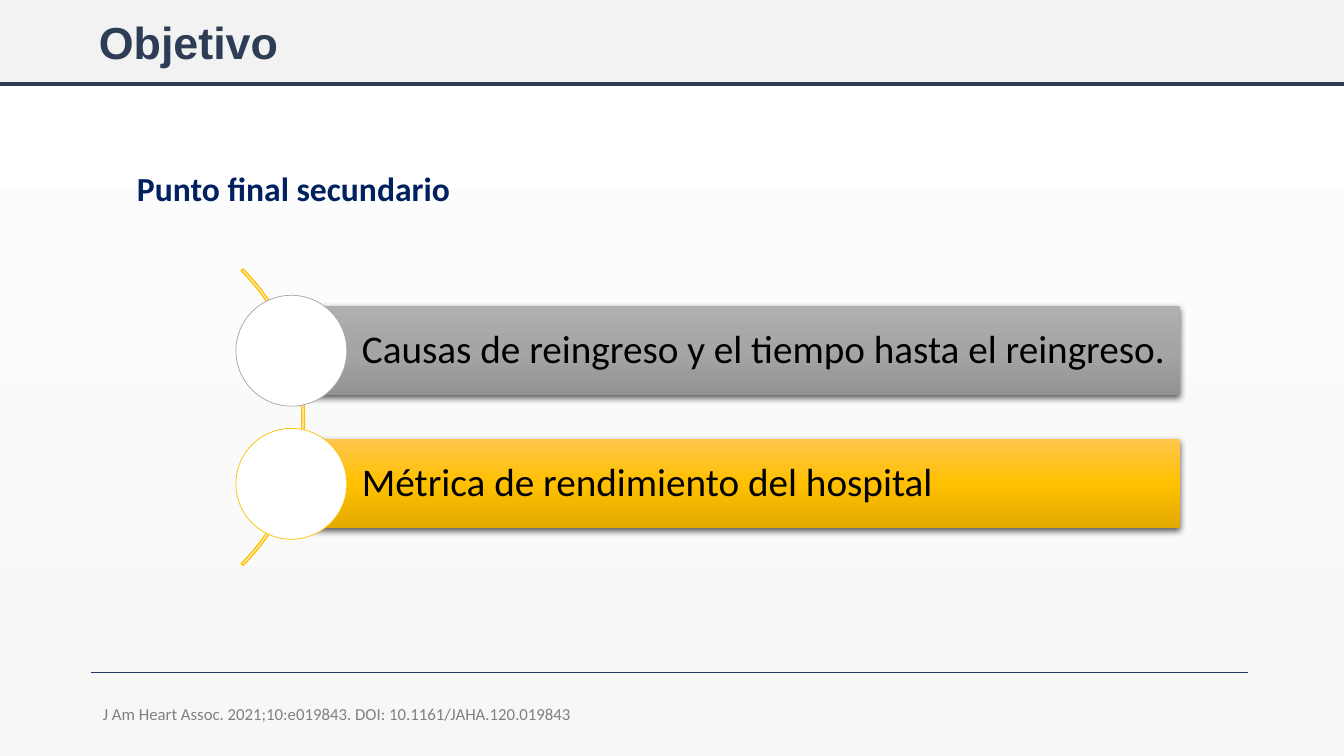
from copy import deepcopy
from dataclasses import dataclass

from lxml.etree import SubElement
from pptx import Presentation
from pptx.dml.color import RGBColor
from pptx.enum.shapes import MSO_CONNECTOR, MSO_SHAPE
from pptx.enum.text import MSO_ANCHOR, MSO_AUTO_SIZE, PP_ALIGN
from pptx.oxml.ns import qn
from pptx.util import Inches, Pt


@dataclass(frozen=True)
class Endpoint:
    text: str
    outline: str
    gradient: tuple[str, ...]


@dataclass(frozen=True)
class Rule:
    left: float
    right: float
    top: float
    color: str
    width: float


ENDPOINTS = (
    Endpoint("Causas de reingreso y el tiempo hasta el reingreso.", "A5A5A5",
             ("AFAFAF", "A5A5A5", "939393")),
    Endpoint("Métrica de rendimiento del hospital", "FFC000",
             ("FFC64B", "FFC000", "E3AA00")),
)
RULES = (
    Rule(0, 13.33, 0.83, "2D3D55", 3),
    Rule(0.9, 12.38, 6.67, "203864", 0.5),
)
FIRST_CENTER, PITCH = 3.48, 1.32
BAR_LEFT, BAR_WIDTH, BAR_HEIGHT = 2.89, 8.81, 0.88
CIRCLE_SIZE = 1.1
ARC_CENTER, ARC_SIZE = 0.94, 4.16


def rgb(color: str) -> RGBColor:
    return RGBColor.from_string(color)


def place(part, left: float, top: float, width: float, height: float) -> None:
    part.left, part.top = Inches(left), Inches(top)
    part.width, part.height = Inches(width), Inches(height)


def paint_gradient(fill, owner, colors: tuple[str, ...]) -> None:
    fill.gradient()
    fill.gradient_angle = 270
    stop_list = next(owner.iter(qn("a:gsLst")))
    while len(stop_list) < len(colors):
        stop_list.append(deepcopy(stop_list[0]))
    for index, (stop, color) in enumerate(zip(fill.gradient_stops, colors)):
        stop.position = index / (len(colors) - 1)
        stop.color.rgb = rgb(color)


def add_figure(slide, kind: MSO_SHAPE, left: float, top: float, width: float,
               height: float, fill: str = "", outline: str = "", weight: float = 1):
    figure = slide.shapes.add_shape(
        kind, Inches(left), Inches(top), Inches(width), Inches(height))
    figure.shadow.inherit = False
    if fill:
        figure.fill.solid()
        figure.fill.fore_color.rgb = rgb(fill)
    else:
        figure.fill.background()
    if outline:
        figure.line.color.rgb = rgb(outline)
        figure.line.width = Pt(weight)
    else:
        figure.line.fill.background()
    return figure


def add_rule(slide, rule: Rule) -> None:
    connector = slide.shapes.add_connector(
        MSO_CONNECTOR.STRAIGHT, Inches(rule.left), Inches(rule.top),
        Inches(rule.right), Inches(rule.top))
    connector.line.color.rgb = rgb(rule.color)
    connector.line.width = Pt(rule.width)
    SubElement(connector._element.spPr, qn("a:effectLst"))


def write(frame, text: str, size: float, color: str, font: str = "Calibri",
          bold: bool = False, spacing: float = 0.9) -> None:
    frame.text = text
    paragraph = frame.paragraphs[0]
    paragraph.alignment = PP_ALIGN.LEFT
    paragraph.line_spacing = spacing
    paragraph.space_before = Pt(0)
    for run in paragraph.runs:
        run.font.name = font
        run.font.size = Pt(size)
        run.font.bold = bold
        run.font.color.rgb = rgb(color)


def drop_shadow(figure) -> None:
    effects = figure._element.spPr.find(qn("a:effectLst"))
    shadow = SubElement(effects, qn("a:outerShdw"), blurRad=str(Pt(4.5)),
                        dist=str(Pt(1.5)), dir="5400000", algn="ctr", rotWithShape="0")
    black = SubElement(shadow, qn("a:srgbClr"), val="000000")
    SubElement(black, qn("a:alpha"), val="63000")


def add_endpoint(slide, endpoint: Endpoint, center: float) -> None:
    bar = add_figure(slide, MSO_SHAPE.RECTANGLE, BAR_LEFT, center - BAR_HEIGHT / 2,
                     BAR_WIDTH, BAR_HEIGHT)
    paint_gradient(bar.fill, bar._element.spPr, endpoint.gradient)
    drop_shadow(bar)
    frame = bar.text_frame
    frame.word_wrap = True
    frame.vertical_anchor = MSO_ANCHOR.MIDDLE
    frame.margin_left = Inches(0.7)
    frame.margin_right = frame.margin_top = frame.margin_bottom = Inches(0.08)
    write(frame, endpoint.text, 28, "000000")
    add_figure(slide, MSO_SHAPE.OVAL, BAR_LEFT - CIRCLE_SIZE / 2, center - CIRCLE_SIZE / 2,
               CIRCLE_SIZE, CIRCLE_SIZE, "FFFFFF", endpoint.outline, 0.5)


def main() -> None:
    deck = Presentation()
    deck.slide_width, deck.slide_height = Inches(13.33), Inches(7.5)
    slide = deck.slides.add_slide(deck.slide_layouts[1])
    title, citation = slide.placeholders
    paint_gradient(slide.background.fill, slide._element, ("FFFFFF", "F7F7F7"))

    header = add_figure(slide, MSO_SHAPE.RECTANGLE, 0, 0, 13.33, 0.83, "F2F2F2")
    title._element.addprevious(header._element)
    for rule in RULES:
        add_rule(slide, rule)

    place(title, 0.88, -0.08, 11.5, 1.06)
    title.text_frame.vertical_anchor = MSO_ANCHOR.MIDDLE
    title.text_frame.auto_size = MSO_AUTO_SIZE.NONE
    write(title.text_frame, "Objetivo", 32, "2D3D55", "Arial", True)

    subtitle = slide.shapes.add_textbox(
        Inches(1.26), Inches(1.62), Inches(4.28), Inches(0.5))
    subtitle.text_frame.word_wrap = True
    write(subtitle.text_frame, "Punto final secundario", 24, "002060",
          bold=True, spacing=1.0)

    middle = FIRST_CENTER + PITCH * (len(ENDPOINTS) - 1) / 2
    arc = add_figure(slide, MSO_SHAPE.BLOCK_ARC, ARC_CENTER - ARC_SIZE / 2,
                     middle - ARC_SIZE / 2, ARC_SIZE, ARC_SIZE, outline="FFC000")
    for index, value in enumerate((189, 27, 0.006)):
        arc.adjustments[index] = value
    for index, endpoint in enumerate(ENDPOINTS):
        add_endpoint(slide, endpoint, FIRST_CENTER + index * PITCH)

    place(citation, 0.92, 6.95, 6.59, 0.55)
    citation.text_frame.auto_size = MSO_AUTO_SIZE.NONE
    citation.text_frame.vertical_anchor = MSO_ANCHOR.TOP
    write(citation.text_frame,
          "J Am Heart Assoc. 2021;10:e019843. DOI: 10.1161/JAHA.120.019843", 12, "808080")
    properties = citation.text_frame.paragraphs[0]._p.get_or_add_pPr()
    properties.set("marL", "0")
    properties.set("indent", "0")
    SubElement(properties, qn("a:buNone"))

    deck.save("out.pptx")


if __name__ == "__main__":
    main()
